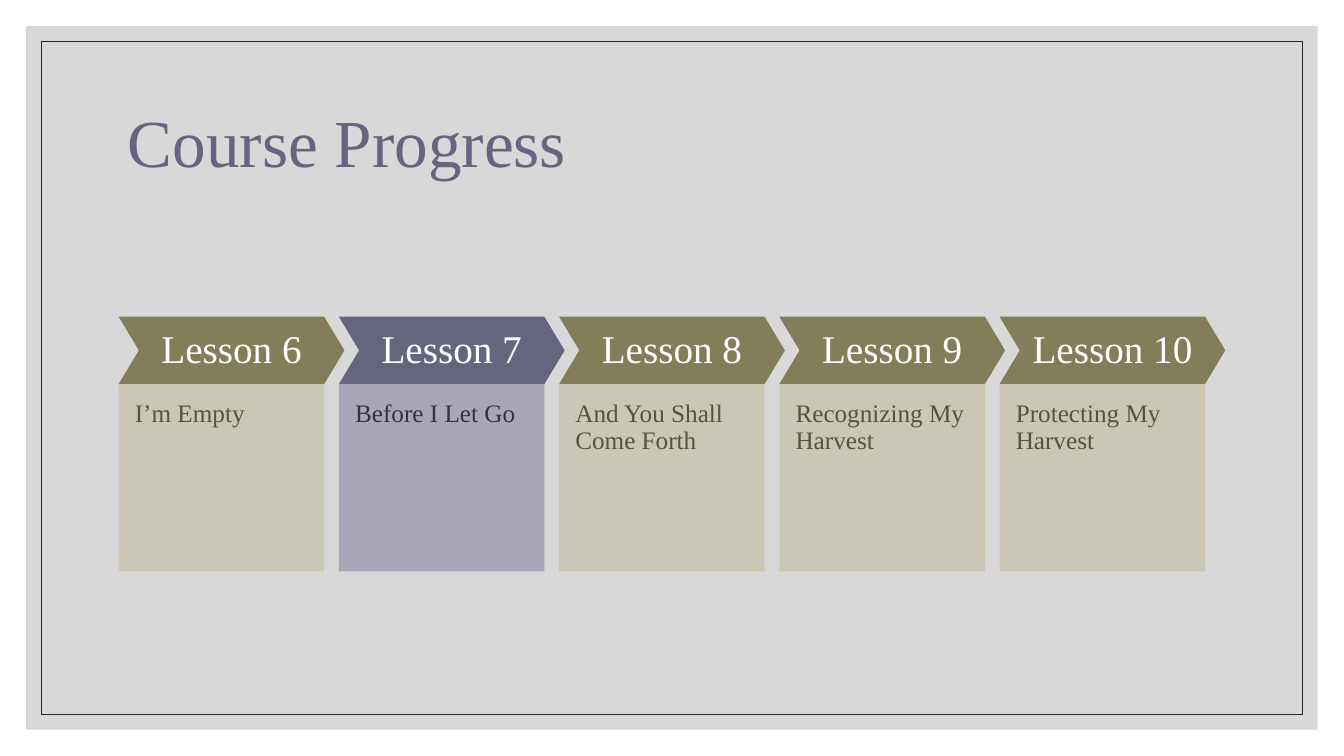
from dataclasses import dataclass

import pptx
import pptx.dml.color
import pptx.enum.shapes
import pptx.enum.text
import pptx.oxml
import pptx.oxml.ns
import pptx.util
from pptx.util import Cm

# Content
TITLE = "Course Progress"
LESSONS = [
    ("Lesson 6", "I’m Empty"),
    ("Lesson 7", "Before I Let Go"),
    ("Lesson 8", "And You Shall Come Forth"),
    ("Lesson 9", "Recognizing My Harvest"),
    ("Lesson 10", "Protecting My Harvest"),
]
CURRENT_LESSON = "Lesson 7"


@dataclass(frozen=True)
class Theme:
    font: str = "Times New Roman"
    title_size: int = 48
    lesson_size: int = 28
    topic_size: int = 18
    backdrop: str = "BFBFBF"
    frame: str = "262626"
    title: str = "656580"
    lesson_text: str = "FFFFFF"
    # Chevron fill, panel fill, panel text
    regular: tuple = ("817E59", "C9C7B1", "56543B")
    current: tuple = ("656580", "A2A2B5", "333340")


THEME = Theme()
SHAPE = pptx.enum.shapes.MSO_SHAPE
ALIGN = pptx.enum.text.PP_ALIGN
ANCHOR = pptx.enum.text.MSO_ANCHOR

# Layout, in centimetres
SLIDE_WIDTH, SLIDE_HEIGHT = 33.87, 19.05
BACKDROP_MARGIN, FRAME_MARGIN = 0.66, 1.04
ROW_LEFT, ROW_TOP, PITCH = 2.99, 7.98, 5.55
CHEVRON_WIDTH, CHEVRON_HEIGHT, CHEVRON_POINT = 5.69, 1.7, 0.3
PANEL_WIDTH = CHEVRON_WIDTH - CHEVRON_POINT * CHEVRON_HEIGHT
PANEL_HEIGHT = 4.72


def rgb(color):
    return pptx.dml.color.RGBColor.from_string(color)


def add_block(shapes, preset, left, top, width, height, fill=None, opacity=100):
    shape = shapes.add_shape(preset, Cm(left), Cm(top), Cm(width), Cm(height))
    shape.shadow.inherit = False
    shape.line.fill.background()
    if fill is None:
        shape.fill.background()
        return shape
    shape.fill.solid()
    shape.fill.fore_color.rgb = rgb(fill)
    if opacity < 100:
        color = shape.element.spPr.find(".//" + pptx.oxml.ns.qn("a:srgbClr"))
        namespace = pptx.oxml.ns.nsdecls("a")
        color.append(pptx.oxml.parse_xml(f'<a:alpha {namespace} val="{opacity * 1000}"/>'))
    return shape


def write_text(shape, text, size, color, align=ALIGN.LEFT, anchor=ANCHOR.MIDDLE,
               insets=(0.25, 0.13, 0.25, 0.13)):
    frame = shape.text_frame
    frame.word_wrap = True
    frame.auto_size = pptx.enum.text.MSO_AUTO_SIZE.NONE
    frame.vertical_anchor = anchor
    frame.margin_left, frame.margin_top, frame.margin_right, frame.margin_bottom = map(Cm, insets)
    paragraph = frame.paragraphs[0]
    paragraph.alignment = align
    paragraph.line_spacing = 0.9
    run = paragraph.add_run()
    run.text = text
    run.font.name = THEME.font
    run.font.size = pptx.util.Pt(size)
    run.font.color.rgb = rgb(color)


def add_inset_rectangle(slide, margin, **fill):
    """Add a rectangle at an even margin from the slide edges, behind the title."""
    shape = add_block(slide.shapes, SHAPE.RECTANGLE, margin, margin,
                      SLIDE_WIDTH - 2 * margin, SLIDE_HEIGHT - 2 * margin, **fill)
    slide.shapes.title.element.addprevious(shape.element)
    return shape


def add_lesson(shapes, left, lesson, topic):
    colors = THEME.current if lesson == CURRENT_LESSON else THEME.regular
    chevron_fill, panel_fill, topic_color = colors
    chevron = add_block(shapes, SHAPE.CHEVRON, left, ROW_TOP,
                        CHEVRON_WIDTH, CHEVRON_HEIGHT, fill=chevron_fill)
    chevron.adjustments[0] = CHEVRON_POINT
    write_text(chevron, lesson, THEME.lesson_size, THEME.lesson_text,
               align=ALIGN.CENTER, insets=(0.2, 0.2, 0.2, 0.2))
    panel = add_block(shapes, SHAPE.RECTANGLE, left, ROW_TOP + CHEVRON_HEIGHT,
                      PANEL_WIDTH, PANEL_HEIGHT, fill=panel_fill, opacity=90)
    write_text(panel, topic, THEME.topic_size, topic_color,
               anchor=ANCHOR.TOP, insets=(0.41, 0.41, 0.41, 0.81))


def main():
    presentation = pptx.Presentation()
    presentation.slide_width = Cm(SLIDE_WIDTH)
    presentation.slide_height = Cm(SLIDE_HEIGHT)
    slide = presentation.slides.add_slide(presentation.slide_layouts[5])

    # Backdrop and thin frame
    add_inset_rectangle(slide, BACKDROP_MARGIN, fill=THEME.backdrop, opacity=60)
    frame = add_inset_rectangle(slide, FRAME_MARGIN)
    frame.line.color.rgb = rgb(THEME.frame)
    frame.line.width = pptx.util.Pt(0.5)

    # Title
    title = slide.shapes.title
    title.left, title.top, title.width, title.height = Cm(2.97), Cm(1.78), Cm(27.94), Cm(3.81)
    write_text(title, TITLE, THEME.title_size, THEME.title)

    # Row of lessons
    lesson_row = slide.shapes.add_group_shape()
    for index, (lesson, topic) in enumerate(LESSONS):
        add_lesson(lesson_row.shapes, ROW_LEFT + index * PITCH, lesson, topic)

    presentation.save("out.pptx")


if __name__ == "__main__":
    main()
